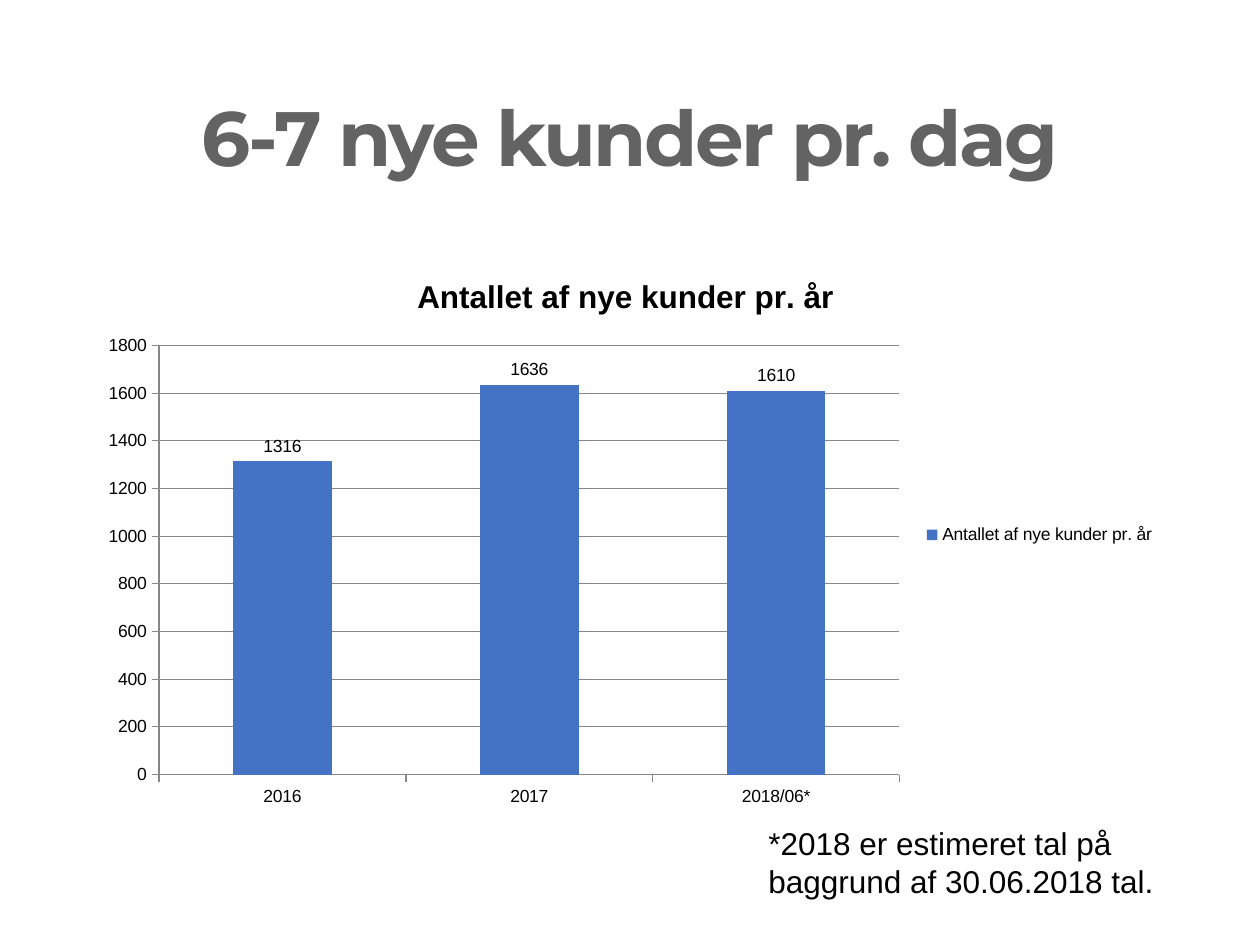
from pptx import Presentation
from pptx.chart.data import CategoryChartData
from pptx.dml.color import RGBColor
from pptx.enum.chart import XL_CHART_TYPE as ChartType, XL_LABEL_POSITION as LabelPosition
from pptx.enum.chart import XL_LEGEND_POSITION as LegendPosition, XL_TICK_MARK as TickMark
from pptx.enum.text import MSO_ANCHOR as Anchor, PP_ALIGN as Align
from pptx.util import Emu, Pt

EMU_PER_PX = 914400 // 126
COLORS = {"title": "636363", "text": "000000", "bar": "4472C4", "axis": "878787"}
SERIES_NAME = "Antallet af nye kunder pr. år "
NEW_CUSTOMERS = {"2016": 1316, "2017": 1636, "2018/06*": 1610}


def px(*lengths):
    return [Emu(length * EMU_PER_PX) for length in lengths]


def color(name):
    return RGBColor.from_string(COLORS[name])


def style_font(font, name, size, color_name, bold=False):
    font.name = name
    font.size = Pt(size)
    font.bold = bold
    font.color.rgb = color(color_name)


def add_text(slide, box, text, font, align=Align.LEFT, anchor=Anchor.TOP,
             line_spacing=1.0, tracking=0):
    frame = slide.shapes.add_textbox(*px(*box)).text_frame
    frame.word_wrap = True
    frame.vertical_anchor = anchor
    paragraph = frame.paragraphs[0]
    paragraph.alignment = align
    paragraph.line_spacing = line_spacing
    run = paragraph.add_run()
    run.text = text
    style_font(run.font, *font)
    if tracking:
        run.font._element.set("spc", str(int(tracking * 100)))


def style_axis(axis):
    axis.major_tick_mark = TickMark.OUTSIDE
    axis.minor_tick_mark = TickMark.NONE
    axis.format.line.color.rgb = color("axis")
    axis.format.line.width = Pt(0.75)
    style_font(axis.tick_labels.font, "Arial", 10, "text")


def add_column_chart(slide, box, series_name, values):
    data = CategoryChartData()
    data.categories = list(values)
    data.add_series(series_name, list(values.values()))
    chart = slide.shapes.add_chart(ChartType.COLUMN_CLUSTERED, *px(*box), data).chart
    style_font(chart.font, "Arial", 10, "text")

    chart.has_title = True
    title_run = chart.chart_title.text_frame.paragraphs[0].add_run()
    title_run.text = series_name
    style_font(title_run.font, "Arial", 18, "text", True)

    chart.has_legend = True
    chart.legend.position = LegendPosition.RIGHT
    chart.legend.include_in_layout = False

    style_axis(chart.category_axis)
    style_axis(chart.value_axis)
    chart.value_axis.minimum_scale = 0
    chart.value_axis.maximum_scale = 1800
    chart.value_axis.major_unit = 200
    gridline = chart.value_axis.major_gridlines.format.line
    gridline.color.rgb = color("axis")
    gridline.width = Pt(0.75)

    plot = chart.plots[0]
    plot.gap_width = 150
    plot.vary_by_categories = False
    fill = plot.series[0].format.fill
    fill.solid()
    fill.fore_color.rgb = color("bar")
    labels = plot.series[0].data_labels
    labels.show_value = True
    labels.position = LabelPosition.OUTSIDE_END
    style_font(labels.font, "Arial", 10, "text")


def main():
    presentation = Presentation()
    presentation.slide_width, presentation.slide_height = px(1260, 945)
    slide = presentation.slides.add_slide(presentation.slide_layouts[6])
    add_text(slide, (87, 50, 1086, 183), "6-7 nye kunder pr. dag",
             ("Montserrat", 44, "title", True), Align.CENTER, Anchor.MIDDLE, 0.9, -1.5)
    add_column_chart(slide, (87, 252, 1086, 566), SERIES_NAME, NEW_CUSTOMERS)
    add_text(slide, (756, 818, 491, 89),
             "*2018 er estimeret tal på baggrund af 30.06.2018 tal.",
             ("Arial", 18, "text"))
    presentation.save("out.pptx")


if __name__ == "__main__":
    main()
